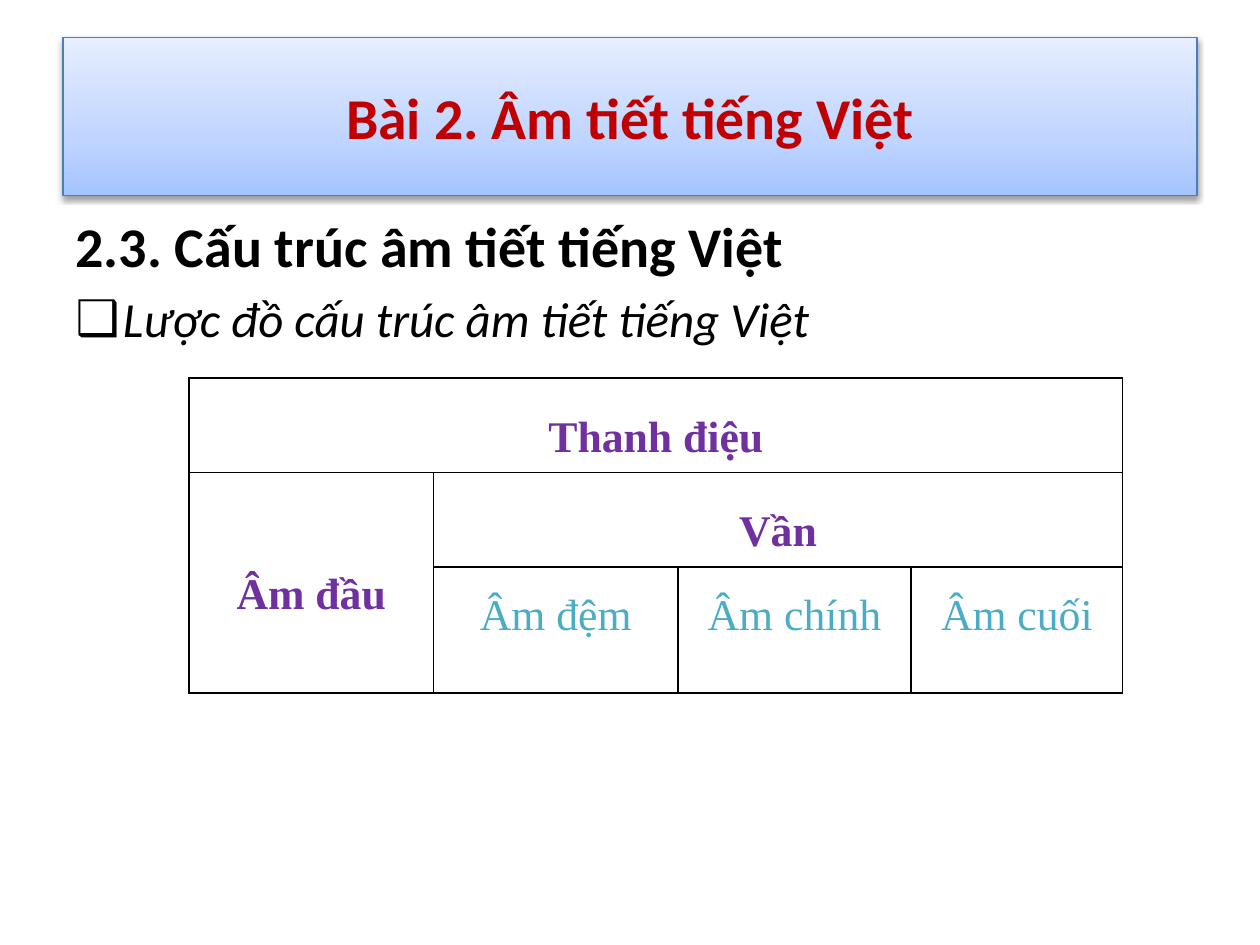
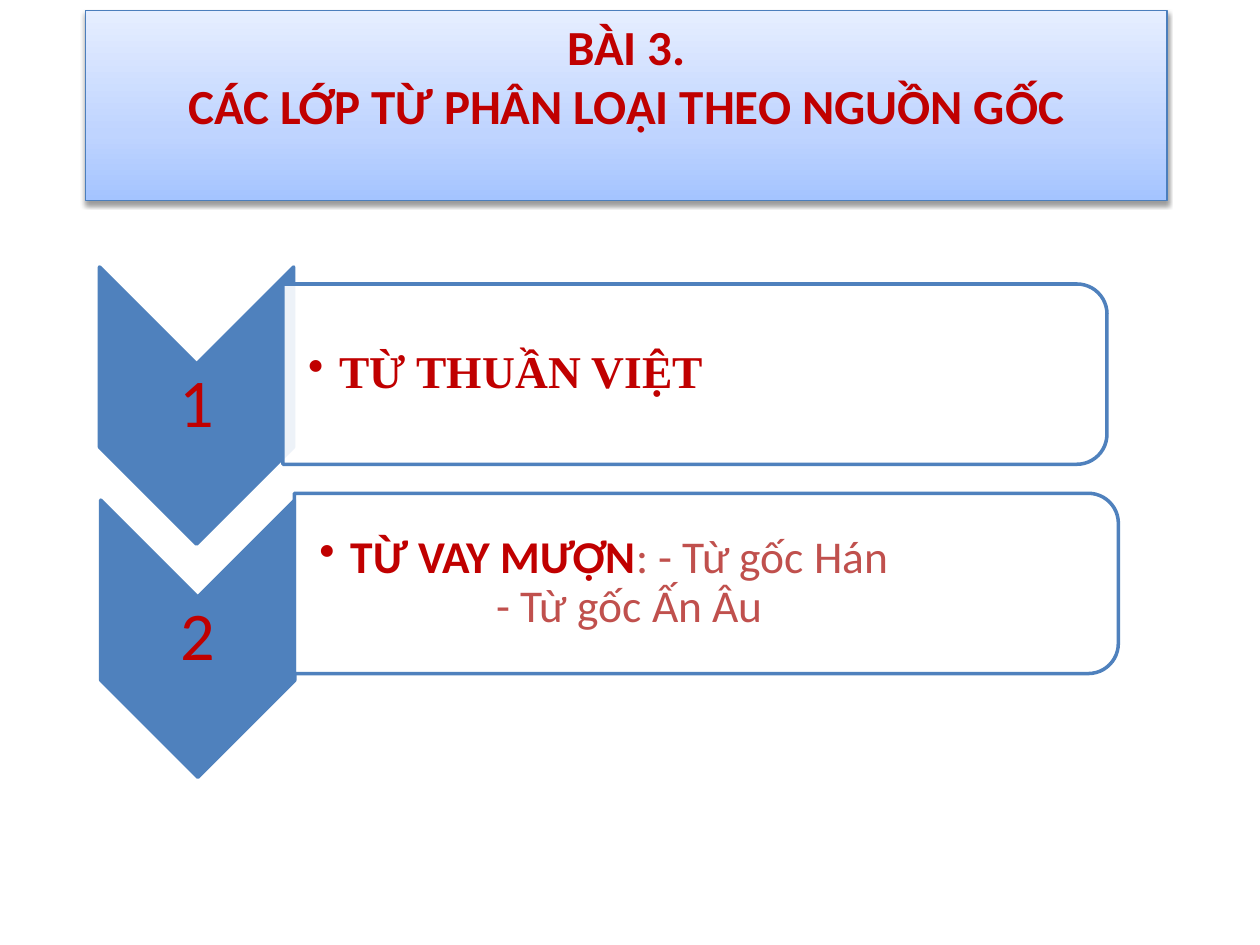
"""Build two slides on Vietnamese syllable structure and word layers by origin."""
import pptx
import pptx.util
import pptx.dml.color
import pptx.enum.shapes
import pptx.enum.text
import pptx.oxml
import pptx.oxml.ns
import copy

Pt = pptx.util.Pt
RGBColor = pptx.dml.color.RGBColor
Shape = pptx.enum.shapes.MSO_SHAPE
Anchor = pptx.enum.text.MSO_ANCHOR
Align = pptx.enum.text.PP_ALIGN
qn = pptx.oxml.ns.qn

RED = RGBColor(0xC0, 0x00, 0x00)
BRICK = RGBColor(0xC0, 0x50, 0x4D)
PURPLE = RGBColor(0x70, 0x30, 0xA0)
TEAL = RGBColor(0x4B, 0xAC, 0xC6)
BLACK = RGBColor(0x00, 0x00, 0x00)
WHITE = RGBColor(0xFF, 0xFF, 0xFF)
BLUE = RGBColor(0x4F, 0x81, 0xBD)
BAND_EDGE = RGBColor(0x4B, 0x7E, 0xBC)
BAND_STOPS = [
    (0, RGBColor(0xA4, 0xC4, 0xFF)),
    (0.35, RGBColor(0xBF, 0xD4, 0xFF)),
    (1, RGBColor(0xE6, 0xEE, 0xFF)),
]
SANS, SERIF = "Calibri", "Times New Roman"

SYLLABLE = {
    "title": "Bài 2. Âm tiết tiếng Việt",
    "band": (36, 21.6, 648, 90),
    "heading": "2.3. Cấu trúc âm tiết tiếng Việt",
    "point": "Lược đồ cấu trúc âm tiết tiếng Việt",
    "body": (36, 117.36, 648, 368.64),
    "table": (108, 216),
    "columns": [139.7, 139.7, 133.2, 121],
    "rows": [54, 54, 72],
    "parts": [
        ("Thanh điệu", (0, 0), (0, 3), True),
        ("Âm đầu", (1, 0), (2, 0), True),
        ("Vần", (1, 1), (1, 3), True),
        ("Âm đệm", (2, 1), (2, 1), False),
        ("Âm chính", (2, 2), (2, 2), False),
        ("Âm cuối", (2, 3), (2, 3), False),
    ],
}

WORD_LAYERS = {
    "title": "BÀI 3.\nCÁC LỚP TỪ PHÂN LOẠI THEO NGUỒN GỐC",
    "band": (49, 5.8, 617.8, 108.7),
    "steps": [
        {"number": "1", "arrow": (112.3, 231.8), "panel": (397.1, 213.8),
         "font": SERIF, "term": "TỪ THUẦN VIỆT", "kinds": []},
        {"number": "2", "arrow": (113, 365), "panel": (403.6, 333.4),
         "font": SANS, "term": "TỪ VAY MƯỢN",
         "kinds": [": - Từ gốc Hán", "- Từ gốc Ấn Âu"]},
    ],
}
ARROW_SIZE = (158.4, 110.9)
PANEL_SIZE = (103, 470.9)
NUMBER_SIZE = (110.9, 47.5)
TERM_SIZE = (465.8, 92.9)


def place(part, box):
    part.left, part.top, part.width, part.height = map(Pt, box)


def around(centre, size):
    return [Pt(c - s / 2) for c, s in zip(centre, size)] + [Pt(s) for s in size]


def style(paragraph, size, color, font=SANS, bold=False, italic=False):
    for run in paragraph.runs:
        run.font.name, run.font.size = font, Pt(size)
        run.font.bold, run.font.italic = bold, italic
        run.font.color.rgb = color


def indent(paragraph, left, hanging=0, bullet=None):
    props = paragraph._p.get_or_add_pPr()
    props.set("marL", str(Pt(left)))
    props.set("indent", str(-Pt(hanging)))
    mark = pptx.oxml.parse_xml(
        f'<a:{"buChar" if bullet else "buNone"} {pptx.oxml.ns.nsdecls("a")}/>')
    if bullet:
        mark.set("char", bullet)
    props.append(mark)


def title_band(slide, text, box, size, anchor):
    band = slide.shapes.title
    place(band, box)
    band.fill.gradient()
    band.fill.gradient_angle = 90
    stop_list = band._element.spPr.find(".//" + qn("a:gsLst"))
    stop_list.append(copy.deepcopy(stop_list[-1]))
    for stop, (position, color) in zip(band.fill.gradient_stops, BAND_STOPS):
        stop.position, stop.color.rgb = position, color
    band.line.color.rgb, band.line.width = BAND_EDGE, Pt(0.75)
    band._element.spPr.append(pptx.oxml.parse_xml(
        f'<a:effectLst {pptx.oxml.ns.nsdecls("a")}>'
        f'<a:outerShdw blurRad="{Pt(3.1)}" dist="{Pt(1.6)}" dir="5400000" rotWithShape="0">'
        '<a:srgbClr val="000000"><a:alpha val="38000"/></a:srgbClr>'
        '</a:outerShdw></a:effectLst>'))
    frame = band.text_frame
    frame.text = text
    frame.auto_size = pptx.enum.text.MSO_AUTO_SIZE.NONE
    frame.vertical_anchor = anchor
    for paragraph in frame.paragraphs:
        paragraph.alignment = Align.CENTER
        style(paragraph, size, RED, bold=True)


def outline_cell(cell):
    props = cell._tc.get_or_add_tcPr()
    for side in ("lnL", "lnR", "lnT", "lnB"):
        props.append(pptx.oxml.parse_xml(
            f'<a:{side} {pptx.oxml.ns.nsdecls("a")} w="{Pt(1)}">'
            f'<a:solidFill><a:srgbClr val="{BLACK}"/></a:solidFill></a:{side}>'))
    cell.fill.background()
    cell.margin_left = cell.margin_right = Pt(5)
    cell.margin_top = cell.margin_bottom = 0


def syllable_table(slide):
    columns, rows = SYLLABLE["columns"], SYLLABLE["rows"]
    box = (*SYLLABLE["table"], sum(columns), sum(rows))
    table = slide.shapes.add_table(len(rows), len(columns), *map(Pt, box)).table
    table.first_row = table.horz_banding = False
    for column, width in zip(table.columns, columns):
        column.width = Pt(width)
    for row, height in zip(table.rows, rows):
        row.height = Pt(height)
    for cell in table.iter_cells():
        outline_cell(cell)
    for text, first, last, is_main in SYLLABLE["parts"]:
        cell = table.cell(*first)
        if first != last:
            cell.merge(table.cell(*last))
        cell.vertical_anchor = Anchor.MIDDLE if is_main else Anchor.TOP
        paragraph = cell.text_frame.paragraphs[0]
        paragraph.text = text
        paragraph.alignment, paragraph.line_spacing = Align.CENTER, 1.5
        style(paragraph, 25, PURPLE if is_main else TEAL, SERIF, is_main)


def syllable_slide(deck):
    slide = deck.slides.add_slide(deck.slide_layouts[1])
    title_band(slide, SYLLABLE["title"], SYLLABLE["band"], 33, Anchor.MIDDLE)
    body = slide.placeholders[1]
    place(body, SYLLABLE["body"])
    body.text_frame.text = SYLLABLE["heading"] + "\n" + SYLLABLE["point"]
    body.text_frame.auto_size = pptx.enum.text.MSO_AUTO_SIZE.NONE
    heading, point = body.text_frame.paragraphs
    indent(heading, 0)
    style(heading, 32, BLACK, bold=True)
    indent(point, 27, 27, "❑")
    style(point, 28, BLACK, italic=True)
    syllable_table(slide)


def turned_shape(slide, kind, centre, size, color):
    shape = slide.shapes.add_shape(kind, *around(centre, size))
    shape.rotation = 90
    shape.shadow.inherit = False
    shape.fill.solid()
    shape.fill.fore_color.rgb = color
    shape.line.color.rgb, shape.line.width = BLUE, Pt(2)
    return shape


def centred_text(slide, centre, size, left_margin, margin):
    frame = slide.shapes.add_textbox(*around(centre, size)).text_frame
    frame.word_wrap = True
    frame.vertical_anchor = Anchor.MIDDLE
    frame.margin_left = Pt(left_margin)
    frame.margin_top = frame.margin_right = frame.margin_bottom = Pt(margin)
    return frame


def add_step(slide, step):
    turned_shape(slide, Shape.CHEVRON, step["arrow"], ARROW_SIZE, BLUE)
    number = centred_text(slide, step["arrow"], NUMBER_SIZE, 2, 2).paragraphs[0]
    number.text = step["number"]
    number.alignment, number.line_spacing = Align.CENTER, 0.9
    style(number, 39, RED)

    panel = turned_shape(slide, Shape.ROUND_2_SAME_RECTANGLE, step["panel"], PANEL_SIZE, WHITE)
    color = panel._element.spPr.find(qn("a:solidFill"))[0]
    color.append(pptx.oxml.parse_xml(
        f'<a:alpha {pptx.oxml.ns.nsdecls("a")} val="90000"/>'))

    x, y = step["panel"]
    text_centre = (x - (PANEL_SIZE[1] - TERM_SIZE[0]) / 2, y)
    frame = centred_text(slide, text_centre, TERM_SIZE, 14.4, 1.5)
    term = frame.paragraphs[0]
    term.text = step["term"]
    style(term, 26, RED, step["font"], True)
    indent(term, 18, 18, "•")
    if step["kinds"]:
        same_line, next_line = step["kinds"]
        term.add_run().text = same_line
        kind_font = term.runs[-1].font
        kind_font.name, kind_font.size = step["font"], Pt(26)
        kind_font.color.rgb = BRICK
        other = frame.add_paragraph()
        other.text = next_line
        style(other, 26, BRICK, step["font"])
        indent(other, 101)
    for paragraph in frame.paragraphs:
        paragraph.line_spacing = 0.9


def word_layers_slide(deck):
    slide = deck.slides.add_slide(deck.slide_layouts[5])
    title_band(slide, WORD_LAYERS["title"], WORD_LAYERS["band"], 28, Anchor.TOP)
    for step in WORD_LAYERS["steps"]:
        add_step(slide, step)


def main():
    deck = pptx.Presentation()
    deck.slide_width, deck.slide_height = Pt(720), Pt(540)
    syllable_slide(deck)
    word_layers_slide(deck)
    deck.save("out.pptx")


if __name__ == "__main__":
    main()
